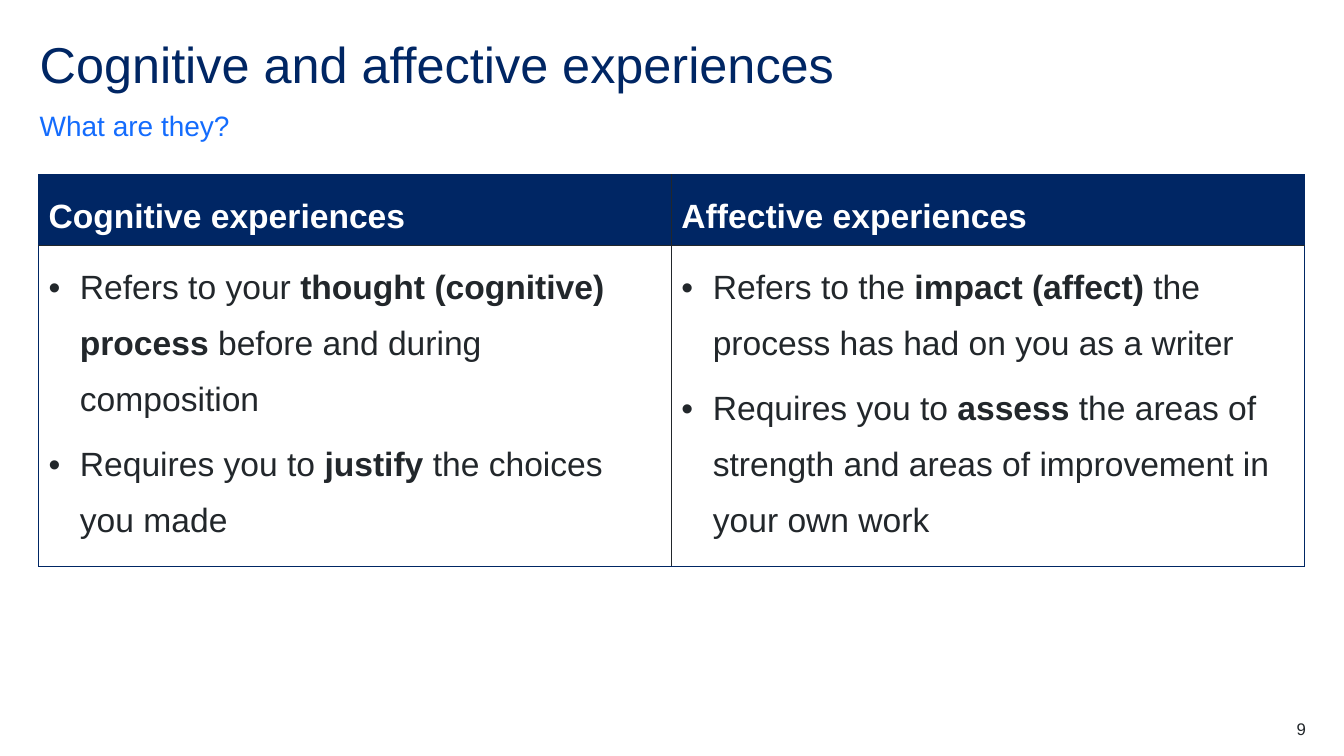
import pptx
import pptx.dml.color
import pptx.enum.text
import pptx.oxml.ns
import pptx.util
import lxml.etree

Cm = pptx.util.Cm
Pt = pptx.util.Pt
RGBColor = pptx.dml.color.RGBColor

NAVY = RGBColor(0x00, 0x26, 0x64)
BLUE = RGBColor(0x14, 0x6C, 0xFD)
INK = RGBColor(0x22, 0x27, 0x2B)
WHITE = RGBColor(0xFF, 0xFF, 0xFF)

FONT = "Arial"
OUTER_LINE = (NAVY, 0.5)
INNER_LINE = (INK, 1)
BULLET_INDENT = Cm(0.79)
CELL_SPACING = {"line_spacing": 1.5, "space_after": Pt(6)}

HEADINGS = ["Cognitive experiences", "Affective experiences"]
POINTS = [
    [
        "Refers to your **thought (cognitive) process **before and during composition",
        "Requires you to **justify** the choices you made",
    ],
    [
        "Refers to the **impact (affect)** the process has had on you as a writer",
        "Requires you to **assess** the areas of strength and areas of improvement in your own work",
    ],
]


def set_attributes(target, values):
    for name, value in values.items():
        setattr(target, name, value)


def add_child(parent, tag, **attributes):
    child = lxml.etree.SubElement(parent, pptx.oxml.ns.qn(tag))
    for name, value in attributes.items():
        child.set(name, str(value))
    return child


def write_paragraph(paragraph, text, size, color, spacing, bold=False):
    """Write text into the paragraph; parts between ** marks are bold."""
    set_attributes(paragraph, spacing)
    for index, part in enumerate(text.split("**")):
        run = paragraph.add_run()
        run.text = part
        set_attributes(run.font, {"name": FONT, "size": Pt(size), "bold": bold or index % 2 == 1})
        run.font.color.rgb = color


def add_text(slide, box, text, size, color, spacing, anchor=pptx.enum.text.MSO_ANCHOR.TOP):
    frame = slide.shapes.add_textbox(*map(Cm, box)).text_frame
    set_attributes(frame, {
        "word_wrap": True, "vertical_anchor": anchor,
        "margin_left": 0, "margin_top": 0, "margin_right": 0, "margin_bottom": 0,
    })
    write_paragraph(frame.paragraphs[0], text, size, color, spacing)


def add_bullet(paragraph):
    properties = paragraph._p.get_or_add_pPr()
    properties.set("marL", str(BULLET_INDENT))
    properties.set("indent", str(-BULLET_INDENT))
    add_child(properties, "a:buFont", typeface=FONT)
    add_child(properties, "a:buChar", char="•")


def set_borders(cell, left, right, top, bottom):
    properties = cell._tc.get_or_add_tcPr()
    sides = {"a:lnL": left, "a:lnR": right, "a:lnT": top, "a:lnB": bottom}
    for tag, (color, width) in sides.items():
        line = add_child(properties, tag, w=int(Pt(width)))
        add_child(add_child(line, "a:solidFill"), "a:srgbClr", val=color)


def add_comparison_table(slide, box, row_height):
    frame = slide.shapes.add_table(2, len(HEADINGS), *map(Cm, box))
    table = frame.table
    for row in table.rows:
        row.height = Cm(row_height)
    for column, (heading, points) in enumerate(zip(HEADINGS, POINTS)):
        left, right = (OUTER_LINE, INNER_LINE) if column == 0 else (INNER_LINE, OUTER_LINE)

        header = table.cell(0, column)
        set_borders(header, left, right, OUTER_LINE, INNER_LINE)
        header.fill.solid()
        header.fill.fore_color.rgb = NAVY
        write_paragraph(header.text_frame.paragraphs[0], heading, 24, WHITE, CELL_SPACING, bold=True)

        body = table.cell(1, column)
        set_borders(body, left, right, INNER_LINE, OUTER_LINE)
        body.fill.background()
        for index, point in enumerate(points):
            text_frame = body.text_frame
            paragraph = text_frame.add_paragraph() if index else text_frame.paragraphs[0]
            write_paragraph(paragraph, point, 24, INK, CELL_SPACING)
            add_bullet(paragraph)


def main():
    presentation = pptx.Presentation()
    set_attributes(presentation, {"slide_width": Cm(33.87), "slide_height": Cm(19.05)})
    slide = presentation.slides.add_slide(presentation.slide_layouts[6])

    add_text(slide, (1, 1, 31.9, 1.52), "Cognitive and affective experiences", 36, NAVY,
             {"line_spacing": 0.9})
    add_text(slide, (1, 2.72, 31.9, 0.86), "What are they?", 20, BLUE,
             {"line_spacing": 1.5, "space_after": Pt(12)}, pptx.enum.text.MSO_ANCHOR.BOTTOM)
    add_comparison_table(slide, (0.97, 4.4, 31.9, 2.08), row_height=1.04)
    add_text(slide, (30.91, 18.11, 2, 0.5), "9", 12, INK,
             {"alignment": pptx.enum.text.PP_ALIGN.RIGHT})

    presentation.save("out.pptx")


if __name__ == "__main__":
    main()
